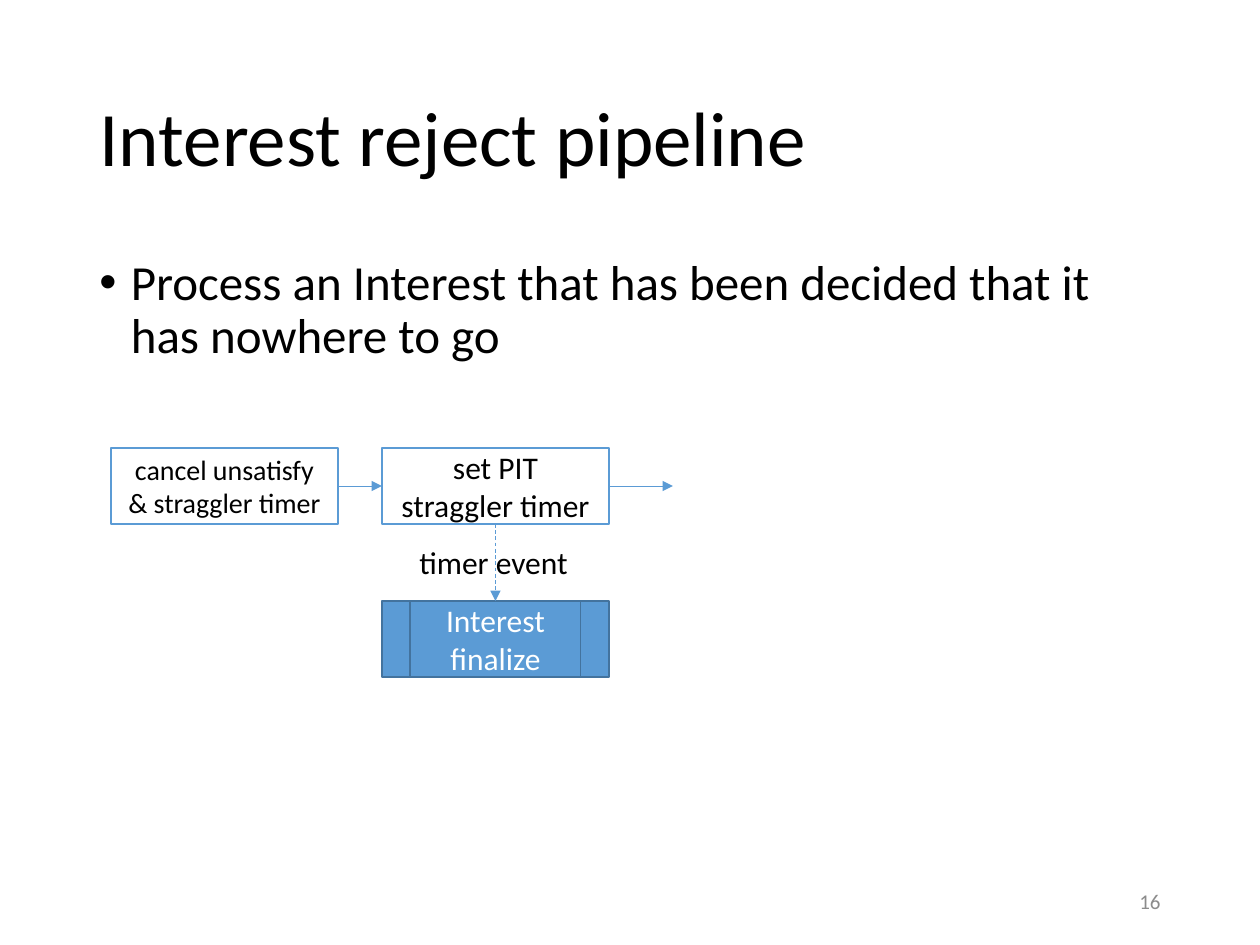
"""Builds the slide on the Interest reject pipeline."""
from lxml import etree
from pptx import Presentation, util as u
from pptx.dml.color import RGBColor
from pptx.enum import dml, shapes, text
from pptx.oxml import ns

PX = u.Inches(1) / 126
FONT = "Calibri"
BLACK = RGBColor(0, 0, 0)
WHITE = RGBColor(255, 255, 255)
GRAY = RGBColor(0x8C, 0x8C, 0x8C)
BLUE = RGBColor(0x5B, 0x9B, 0xD5)
DARK_BLUE = RGBColor(0x43, 0x73, 0x9E)
TOP, LEFT, BOTTOM, RIGHT = range(4)

TITLE = ("Interest reject pipeline", (87, 50, 1086, 183))
BODY = ("Process an Interest that has been decided that it has nowhere to go",
        (87, 252, 1086, 600))
NUMBER = ("16", (890, 876, 283, 50))
EVENT = ("timer event", (407, 537, 176, 50))
STEP_SIZE = (227, 76)
RECT = shapes.MSO_SHAPE.RECTANGLE
PROCESS = shapes.MSO_SHAPE.FLOWCHART_PREDEFINED_PROCESS
STEPS = {
    "cancel": ("cancel unsatisfy & straggler timer", 16, (111, 448), RECT, WHITE, BLUE, BLACK),
    "set": ("set PIT straggler timer", 18, (382, 448), RECT, WHITE, BLUE, BLACK),
    "finalize": ("Interest finalize", 18, (382, 601), PROCESS, BLUE, DARK_BLUE, WHITE),
}
ARROWS = [
    ("cancel", RIGHT, "set", LEFT, False),
    ("set", BOTTOM, "finalize", TOP, True),
    ("set", RIGHT, None, None, False),
]
EXIT = (673, 486)


def emu(*lengths):
    return [round(length * PX) for length in lengths]


def place(shape, area):
    shape.left, shape.top, shape.width, shape.height = emu(*area)


def write(shape, words, size, color, align=text.PP_ALIGN.LEFT,
          anchor=text.MSO_ANCHOR.MIDDLE, wrap=True):
    frame = shape.text_frame
    frame.word_wrap = wrap
    frame.vertical_anchor = anchor
    para = frame.paragraphs[0]
    para.alignment = align
    span = para.add_run()
    span.text = words
    span.font.size = u.Pt(size)
    span.font.name = FONT
    span.font.color.rgb = color
    return para


def add_bullet(para):
    props = para._p.get_or_add_pPr()
    indent = u.Inches(0.25)
    props.set("marL", str(indent))
    props.set("indent", str(-indent))
    etree.SubElement(props, ns.qn("a:buFont"), typeface="Arial")
    etree.SubElement(props, ns.qn("a:buChar"), char="•")


def add_step(page, words, size, corner, kind, fill, line, color):
    box = page.shapes.add_shape(kind, *emu(*corner, *STEP_SIZE))
    box.shadow.inherit = False
    box.fill.solid()
    box.fill.fore_color.rgb = fill
    box.line.color.rgb = line
    box.line.width = u.Pt(1)
    write(box, words, size, color, text.PP_ALIGN.CENTER)
    return box


def add_arrow(page, start, start_side, end, end_side, dashed):
    arrow = page.shapes.add_connector(shapes.MSO_CONNECTOR.STRAIGHT, *emu(*EXIT, *EXIT))
    arrow.begin_connect(start, start_side)
    if end is not None:
        arrow.end_connect(end, end_side)
    arrow.line.color.rgb = BLUE
    arrow.line.width = u.Pt(0.5)
    if dashed:
        arrow.line.dash_style = dml.MSO_LINE.DASH
    etree.SubElement(arrow.line._get_or_add_ln(), ns.qn("a:tailEnd"), type="triangle")
    etree.SubElement(arrow._element.spPr, ns.qn("a:effectLst"))


def main():
    deck = Presentation()
    deck.slide_width, deck.slide_height = u.Inches(10), u.Inches(7.5)
    page = deck.slides.add_slide(deck.slide_layouts[5])

    words, area = TITLE
    place(page.shapes.title, area)
    write(page.shapes.title, words, 44, BLACK).line_spacing = 0.9

    words, area = BODY
    body = page.shapes.add_textbox(*emu(*area))
    para = write(body, words, 28, BLACK, anchor=text.MSO_ANCHOR.TOP)
    para.line_spacing = 0.9
    para.space_before = u.Pt(10)
    add_bullet(para)

    words, area = NUMBER
    write(page.shapes.add_textbox(*emu(*area)), words, 12, GRAY, text.PP_ALIGN.RIGHT)

    steps = {name: add_step(page, *step) for name, step in STEPS.items()}
    for start, start_side, end, end_side, dashed in ARROWS:
        add_arrow(page, steps[start], start_side, steps.get(end), end_side, dashed)

    words, area = EVENT
    event = page.shapes.add_textbox(*emu(*area))
    write(event, words, 18, BLACK, anchor=text.MSO_ANCHOR.TOP, wrap=False)
    event.text_frame.auto_size = text.MSO_AUTO_SIZE.SHAPE_TO_FIT_TEXT

    deck.save("out.pptx")


if __name__ == "__main__":
    main()
